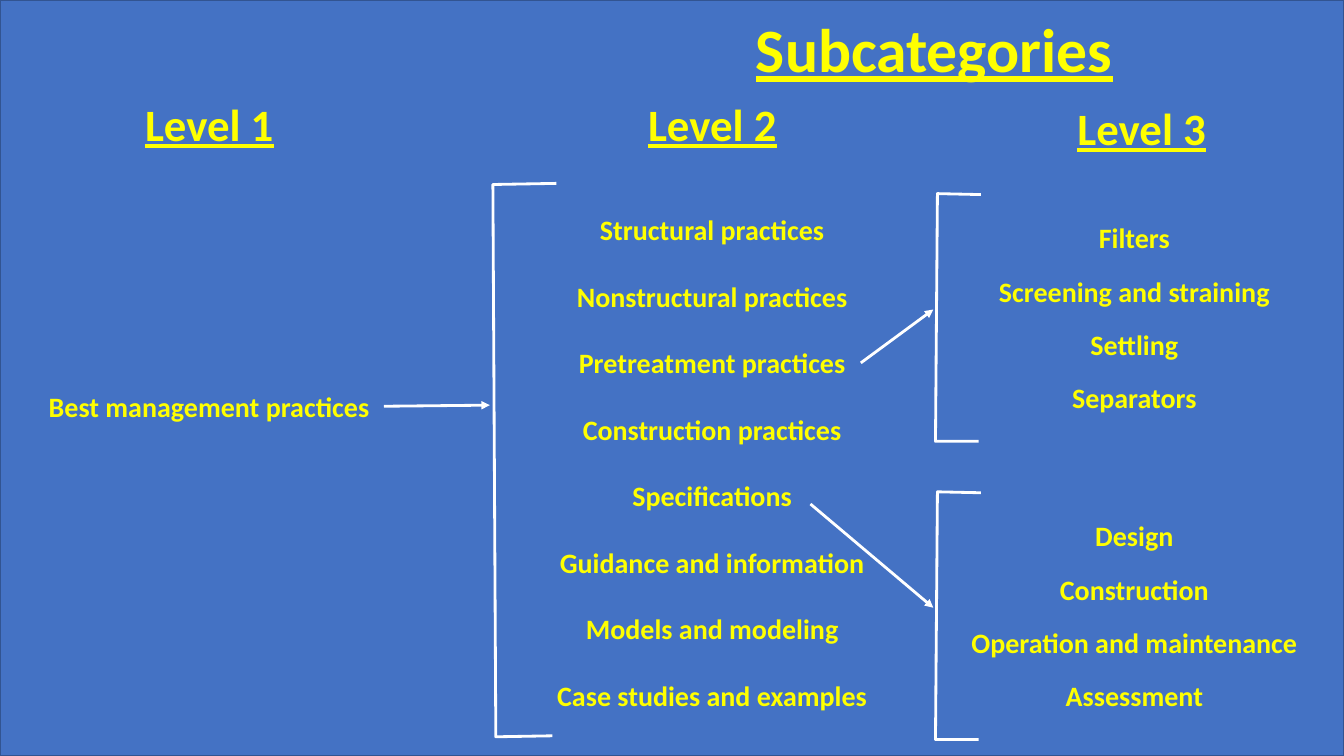
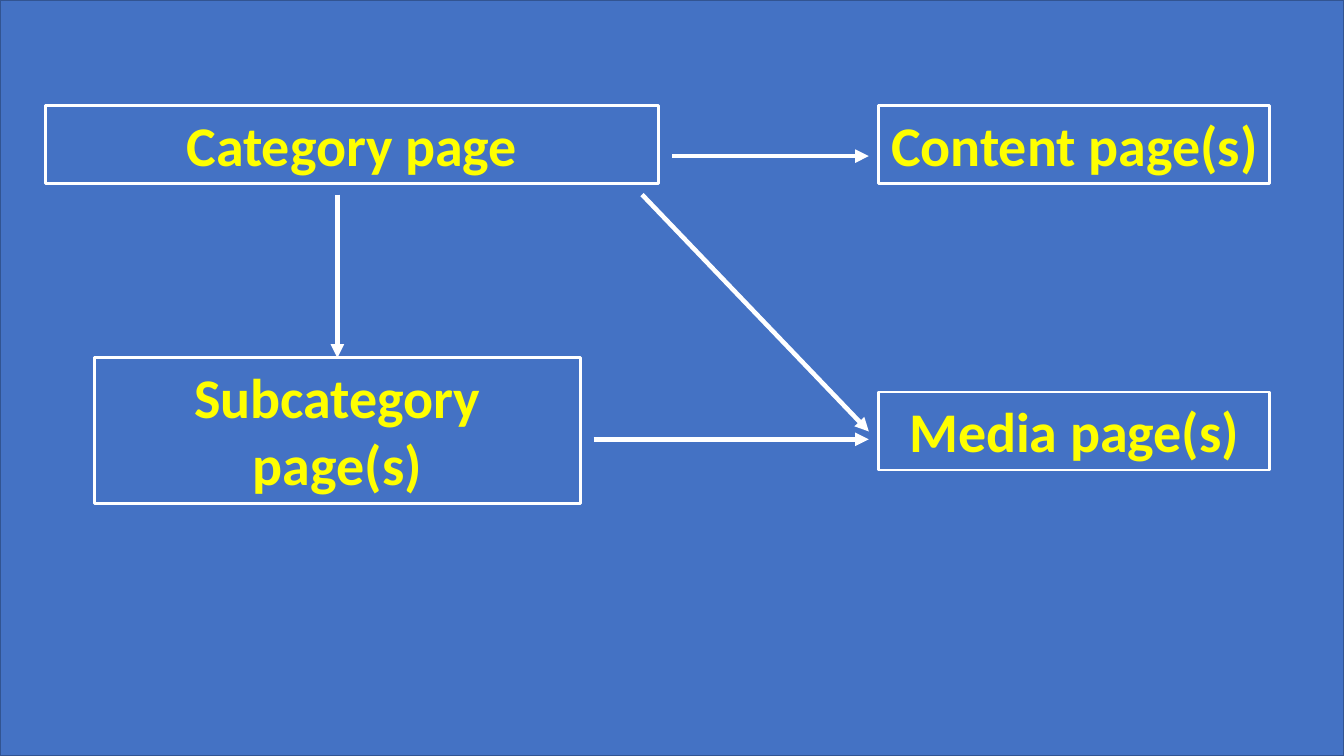
from dataclasses import dataclass

from lxml.etree import SubElement
from pptx import Presentation
from pptx.dml.color import RGBColor
from pptx.enum.shapes import MSO_CONNECTOR as Connector, MSO_SHAPE as Preset
from pptx.enum.text import MSO_ANCHOR as Anchor, MSO_AUTO_SIZE as AutoSize, PP_ALIGN as Align
from pptx.oxml.ns import qn
from pptx.util import Pt

WIDTH, HEIGHT = 960, 540
TITLE_ONLY, BLANK = 5, 6


@dataclass(frozen=True)
class Theme:
    font: str = "Calibri"
    panel: RGBColor = RGBColor(0x44, 0x72, 0xC4)
    panel_edge: RGBColor = RGBColor(0x32, 0x54, 0x91)
    text: RGBColor = RGBColor(0xFF, 0xFF, 0x00)
    line: RGBColor = RGBColor(0xFF, 0xFF, 0xFF)
    title_size: float = 44
    page_size: float = 40
    level_size: float = 32
    item_size: float = 20
    thin: float = 2
    thick: float = 3.25
    item_edge: float = 3


class Deck:
    """Holds the theme and the slide being drawn; all lengths are in points."""

    def __init__(self, theme):
        self.theme = theme
        self.presentation = Presentation()
        self.presentation.slide_width = Pt(WIDTH)
        self.presentation.slide_height = Pt(HEIGHT)
        self.slide = None

    def start_slide(self, layout):
        layouts = self.presentation.slide_layouts
        self.slide = self.presentation.slides.add_slide(layouts[layout])
        panel = self.rectangle(0, 0, WIDTH, HEIGHT, self.theme.panel_edge, 1)
        panel.fill.solid()
        panel.fill.fore_color.rgb = self.theme.panel

    def rectangle(self, left, top, width, height, edge, weight):
        shape = self.slide.shapes.add_shape(
            Preset.RECTANGLE, Pt(left), Pt(top), Pt(width), Pt(height))
        shape.shadow.inherit = False
        shape.fill.background()
        self.stroke(shape.line, edge, weight)
        return shape

    def stroke(self, line, color, weight):
        line.color.rgb = color
        line.width = Pt(weight)

    def set_text(self, shape, text, size, align=Align.CENTER, wrap=True, underline=None):
        frame = shape.text_frame
        frame.text = text
        frame.word_wrap = wrap
        frame.auto_size = AutoSize.SHAPE_TO_FIT_TEXT
        frame.vertical_anchor = Anchor.TOP
        paragraph = frame.paragraphs[0]
        paragraph.alignment = align
        font = paragraph.font
        font.name, font.size, font.bold = self.theme.font, Pt(size), True
        font.underline = underline
        font.color.rgb = self.theme.text

    def title(self, text, left, top, width, height):
        heading = self.slide.shapes.title
        heading.left, heading.top = Pt(left), Pt(top)
        heading.width, heading.height = Pt(width), Pt(height)
        self.set_text(heading, text, self.theme.title_size, Align.LEFT, False, True)
        # The panel is drawn after the placeholder, so bring the title forward.
        self.slide.shapes.element.append(heading.element)

    def level(self, text, left, top):
        heading = self.slide.shapes.add_textbox(Pt(left), Pt(top), Pt(107.3), Pt(46))
        self.set_text(heading, text, self.theme.level_size, Align.LEFT, False, True)

    def items(self, texts, left, top, pitch=0):
        for row, text in enumerate(texts):
            item = self.rectangle(left, top + row * pitch, 249.8, 31.5,
                                  self.theme.panel, self.theme.item_edge)
            self.set_text(item, text, self.theme.item_size)

    def page(self, text, left, top, width, height):
        box = self.rectangle(left, top, width, height, self.theme.line, self.theme.thin)
        self.set_text(box, text, self.theme.page_size)

    def bracket(self, start, *corners):
        builder = self.slide.shapes.build_freeform(Pt(start[0]), Pt(start[1]))
        builder.add_line_segments([(Pt(x), Pt(y)) for x, y in corners], close=False)
        outline = builder.convert_to_shape()
        outline.shadow.inherit = False
        outline.fill.background()
        self.stroke(outline.line, self.theme.line, self.theme.thin)

    def arrow(self, start, end, weight):
        connector = self.slide.shapes.add_connector(
            Connector.STRAIGHT, *(Pt(value) for value in (*start, *end)))
        self.stroke(connector.line, self.theme.line, weight)
        properties = connector.element.spPr
        SubElement(properties.find(qn("a:ln")), qn("a:tailEnd"), type="triangle")
        SubElement(properties, qn("a:effectLst"))


def draw_levels(deck):
    thin = deck.theme.thin
    deck.start_slide(TITLE_ONLY)
    deck.title("Subcategories", 532.8, 4.3, 271.4, 60.5)
    deck.level("Level 1", 96.5, 65.5)
    deck.level("Level 2", 455.8, 65.5)
    deck.level("Level 3", 762.5, 68.4)

    deck.items(["Best management practices"], 24.5, 274.5)
    deck.arrow((274.3, 290.2), (349.9, 289.4), thin)
    deck.bracket((397.4, 131), (352.1, 131.8), (354.2, 526.3), (394.6, 525.6))
    deck.items(["Structural practices", "Nonstructural practices",
                "Pretreatment practices", "Construction practices",
                "Specifications", "Guidance and information",
                "Models and modeling", "Case studies and examples"],
               383.8, 148.3, 47.5)

    subgroups = [
        ((614.9, 259.2), ["Filters", "Screening and straining", "Settling", "Separators"]),
        ((578.9, 360), ["Design", "Construction", "Operation and maintenance",
                        "Assessment"]),
    ]
    for group, (arrow_start, texts) in enumerate(subgroups):
        drop = group * 213
        deck.items(texts, 685.4, 154.1 + drop, 38.1)
        deck.arrow(arrow_start, (666.7, 221.1 + drop), thin)
        deck.bracket((700.6, 139 + drop), (669.6, 138.3 + drop),
                     (668.2, 315.2 + drop), (699.1, 315.2 + drop))


def draw_page_links(deck):
    deck.start_slide(BLANK)
    deck.page("Category page", 32.4, 75.6, 438, 55.7)
    deck.page("Subcategory page(s)", 67.5, 255.6, 347, 104.2)
    deck.page("Content page(s)", 627.6, 75.6, 279.5, 55.7)
    deck.page("Media page(s)", 627.6, 280, 279.5, 55.7)
    for start, end in [((241, 139), (241, 255.6)),
                       ((424, 313.8), (620.6, 313.8)),
                       ((458.6, 139), (620.6, 308.2)),
                       ((480.2, 111.5), (620.6, 111.5))]:
        deck.arrow(start, end, deck.theme.thick)


def main():
    deck = Deck(Theme())
    draw_levels(deck)
    draw_page_links(deck)
    deck.presentation.save("out.pptx")


if __name__ == "__main__":
    main()
